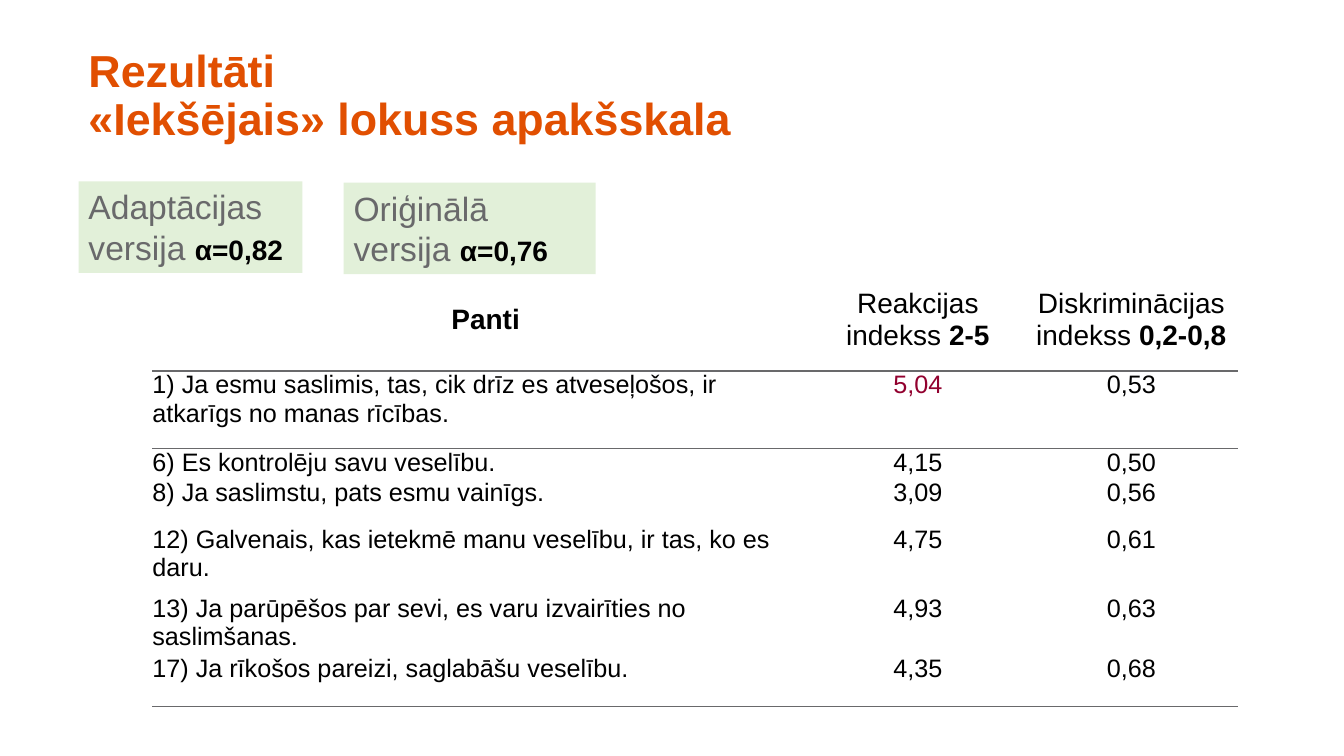
from lxml import etree
from pptx import Presentation
from pptx.dml.color import RGBColor
from pptx.enum.shapes import MSO_SHAPE
from pptx.enum.text import MSO_ANCHOR, PP_ALIGN
from pptx.oxml import parse_xml
from pptx.oxml.ns import nsdecls, qn
from pptx.util import Cm, Pt

FONT = "Arial"
ORANGE = RGBColor(0xE1, 0x4F, 0x01)
GREY = RGBColor(0x69, 0x69, 0x6B)
BLACK = RGBColor(0, 0, 0)
CRIMSON = RGBColor(0x92, 0x01, 0x2F)
PALE_GREEN = RGBColor(0xE2, 0xF0, 0xD9)
PLAIN_TABLE_STYLE = "{2D5ABB26-0587-4C30-8999-92F81FD0307C}"

TITLE = "Rezultāti\v«Iekšējais» lokuss apakšskala"
VERSIONS = [
    ("Adaptācijas versija ", "α=0,82", 1.98, 4.57, 5.64),
    ("Oriģinālā versija ", "α=0,76", 8.66, 4.6, 6.35),
]
HEADINGS = [("", " Panti"), ("Reakcijas indekss ", "2-5"),
            ("Diskriminācijas indekss ", "0,2-0,8")]
ITEMS = [
    ("1) Ja esmu saslimis, tas, cik drīz es atveseļošos, ir atkarīgs no manas rīcības.",
     "5,04", "0,53"),
    ("6) Es kontrolēju savu veselību.", "4,15", "0,50"),
    ("8) Ja saslimstu, pats esmu vainīgs.", "3,09", "0,56"),
    ("12) Galvenais, kas ietekmē manu veselību, ir tas, ko es daru.", "4,75", "0,61"),
    ("13) Ja parūpēšos par sevi, es varu izvairīties no saslimšanas.", "4,93", "0,63"),
    ("17) Ja rīkošos pareizi, saglabāšu veselību.", "4,35", "0,68"),
]
COLUMN_WIDTHS = [16.6, 5.38, 5.38]
ROW_HEIGHTS = [2.59, 1.96, 0.71, 1.17, 1.73, 1.42, 1.3]
RULED_ROWS = {0, 1, len(ITEMS)}
OUT_OF_RANGE = "5,04"


def style(font, size, color, bold=False):
    font.name, font.size, font.bold = FONT, Pt(size), bold
    font.color.rgb = color


def add_run(paragraph, text, size, color, bold=False):
    run = paragraph.add_run()
    run.text = text
    style(run.font, size, color, bold)


def rule_below(cell):
    line = parse_xml(f'<a:lnB {nsdecls("a")} w="12700"/>')
    solid = etree.SubElement(line, qn("a:solidFill"))
    etree.SubElement(solid, qn("a:srgbClr"), val=str(GREY))
    cell._tc.get_or_add_tcPr().insert(0, line)


def add_title(slide):
    frame = slide.shapes.add_textbox(Cm(1.98), Cm(0.61), Cm(29.21), Cm(3.68)).text_frame
    frame.word_wrap = True
    frame.vertical_anchor = MSO_ANCHOR.MIDDLE
    heading = frame.paragraphs[0]
    heading.text = TITLE
    heading.line_spacing = 0.9
    style(heading.font, 32, ORANGE, True)


def add_version(slide, label, alpha, left, top, width):
    panel = slide.shapes.add_shape(MSO_SHAPE.RECTANGLE, Cm(left), Cm(top), Cm(width), Cm(2.31))
    panel.shadow.inherit = False
    panel.fill.solid()
    panel.fill.fore_color.rgb = PALE_GREEN
    panel.line.fill.background()
    panel.text_frame.word_wrap = True
    panel.text_frame.vertical_anchor = MSO_ANCHOR.TOP
    caption = panel.text_frame.paragraphs[0]
    caption.alignment = PP_ALIGN.LEFT
    add_run(caption, label, 24, GREY)
    add_run(caption, alpha, 20, BLACK, True)


def add_results(slide):
    frame = slide.shapes.add_table(
        len(ROW_HEIGHTS), len(COLUMN_WIDTHS), Cm(3.84), Cm(6.76),
        Cm(sum(COLUMN_WIDTHS)), Cm(sum(ROW_HEIGHTS)))
    results = frame.table
    results.horz_banding = results.first_row = False
    results._tbl.tblPr.find(qn("a:tableStyleId")).text = PLAIN_TABLE_STYLE
    for column, width in zip(results.columns, COLUMN_WIDTHS):
        column.width = Cm(width)
    for row, height in zip(results.rows, ROW_HEIGHTS):
        row.height = Cm(height)

    for r, entries in enumerate([HEADINGS, *ITEMS]):
        for c, entry in enumerate(entries):
            cell = results.cell(r, c)
            cell.margin_left = cell.margin_right = cell.margin_top = cell.margin_bottom = 0
            cell.vertical_anchor = MSO_ANCHOR.TOP if r else MSO_ANCHOR.MIDDLE
            cell.fill.background()
            if r in RULED_ROWS:
                rule_below(cell)
            paragraph = cell.text_frame.paragraphs[0]
            paragraph.alignment = PP_ALIGN.LEFT if r and c == 0 else PP_ALIGN.CENTER
            if r:
                paragraph.text = entry
                style(paragraph.font, 18, CRIMSON if entry == OUT_OF_RANGE else BLACK)
            else:
                label, emphasis = entry
                if label:
                    add_run(paragraph, label, 20, BLACK)
                add_run(paragraph, emphasis, 20, BLACK, True)


def main():
    deck = Presentation()
    deck.slide_width, deck.slide_height = Cm(33.87), Cm(19.05)
    slide = deck.slides.add_slide(deck.slide_layouts[6])
    add_title(slide)
    add_results(slide)
    for version in VERSIONS:
        add_version(slide, *version)
    deck.save("out.pptx")


if __name__ == "__main__":
    main()
